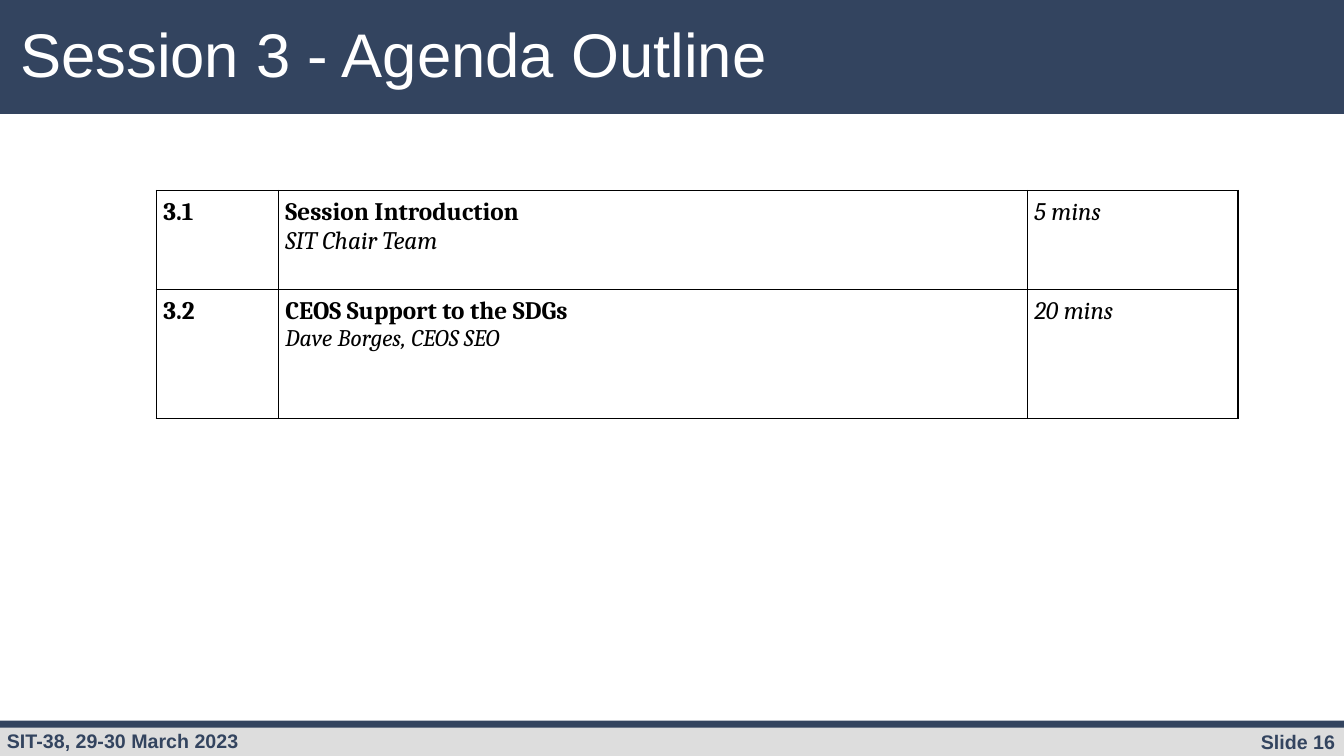
from lxml import etree
from pptx import Presentation
from pptx import util as u
from pptx.dml.color import RGBColor
from pptx.enum import shapes, text
from pptx.oxml import ns

COLORS = {"navy": "33445F", "grey": "DDDDDD", "white": "FFFFFF", "black": "000000"}
AGENDA = [
    ("3.1", "Session Introduction", "SIT Chair Team", 18, "5 mins"),
    ("3.2", "CEOS Support to the SDGs", "Dave Borges, CEOS SEO", 17, "20 mins"),
]
COLUMN_WIDTHS = (1.21, 7.43, 2.09)
ROW_HEIGHTS = (0.98, 1.28)


def color(name):
    return RGBColor.from_string(COLORS[name])


def write(paragraph, words, font="Arial", size=14, fill="navy", bold=False,
          italic=False, align=text.PP_ALIGN.LEFT):
    paragraph.alignment = align
    run = paragraph.add_run()
    run.text = words
    run.font.name = font
    run.font.size = u.Pt(size)
    run.font.bold = bold
    run.font.italic = italic
    run.font.color.rgb = color(fill)


class AgendaSlide:
    """Draws the elements of an agenda slide in one shared style."""

    def __init__(self, presentation):
        self.slide = presentation.slides.add_slide(presentation.slide_layouts[5])

    def band(self, top, height, fill):
        shape = self.slide.shapes.add_shape(
            shapes.MSO_SHAPE.RECTANGLE, 0, u.Inches(top), u.Inches(13.33), u.Inches(height))
        shape.shadow.inherit = False
        shape.fill.solid()
        shape.fill.fore_color.rgb = color(fill)
        shape.line.fill.background()

    def title(self, words):
        title = self.slide.shapes.title
        title.left, title.top = u.Inches(0.1), u.Inches(0.11)
        title.width, title.height = u.Inches(9.48), u.Inches(0.84)
        frame = title.text_frame
        frame.auto_size = text.MSO_AUTO_SIZE.NONE
        frame.vertical_anchor = text.MSO_ANCHOR.TOP
        write(frame.paragraphs[0], words, size=44, fill="white")
        tree = title._element.getparent()
        tree.append(title._element)

    def label(self, words, left, top, width, **style):
        box = self.slide.shapes.add_textbox(
            u.Inches(left), u.Inches(top), u.Inches(width), u.Inches(0.34))
        box.text_frame.word_wrap = True
        write(box.text_frame.paragraphs[0], words, bold=True, **style)

    def borders(self, cell):
        properties = cell._tc.get_or_add_tcPr()
        for side in ("a:lnL", "a:lnR", "a:lnT", "a:lnB"):
            line = etree.SubElement(properties, ns.qn(side), w=str(u.Pt(1)))
            fill = etree.SubElement(line, ns.qn("a:solidFill"))
            etree.SubElement(fill, ns.qn("a:srgbClr"), val=COLORS["black"])

    def cell(self, cell, lines):
        cell.margin_left = cell.margin_right = u.Inches(0.07)
        cell.margin_top = cell.margin_bottom = u.Inches(0.07)
        self.borders(cell)
        cell.fill.solid()
        cell.fill.fore_color.rgb = color("white")
        frame = cell.text_frame
        for index, (words, style) in enumerate(lines):
            paragraph = frame.add_paragraph() if index else frame.paragraphs[0]
            write(paragraph, words, font="Cambria", fill="black", **style)

    def agenda(self, left, top):
        table = self.slide.shapes.add_table(
            len(AGENDA), len(COLUMN_WIDTHS), u.Inches(left), u.Inches(top),
            u.Inches(sum(COLUMN_WIDTHS)), u.Inches(sum(ROW_HEIGHTS))).table
        table.first_row = table.horz_banding = False
        for column, width in zip(table.columns, COLUMN_WIDTHS):
            column.width = u.Inches(width)
        heading = {"size": 18, "bold": True}
        for row, height, item in zip(table.rows, ROW_HEIGHTS, AGENDA):
            row.height = u.Inches(height)
            number, topic, speaker, speaker_size, duration = item
            contents = (
                [(number, heading)],
                [(topic, heading), (speaker, {"size": speaker_size, "italic": True})],
                [(duration, {"size": 18, "italic": True})],
            )
            for cell, lines in zip(row.cells, contents):
                self.cell(cell, lines)


def main():
    presentation = Presentation()
    presentation.slide_width = u.Inches(13.33)
    presentation.slide_height = u.Inches(7.5)
    page = AgendaSlide(presentation)
    page.band(0, 1.13, "navy")
    page.band(7.19, 0.31, "grey")
    page.band(7.15, 0.07, "navy")
    page.title("Session 3 - Agenda Outline")
    page.label("SIT-38, 29-30 March 2023", -0.03, 7.18, 5.39)
    page.label("Slide 16", 11.23, 7.19, 2.11, align=text.PP_ALIGN.RIGHT)
    page.agenda(1.55, 1.89)
    presentation.save("out.pptx")


if __name__ == "__main__":
    main()
